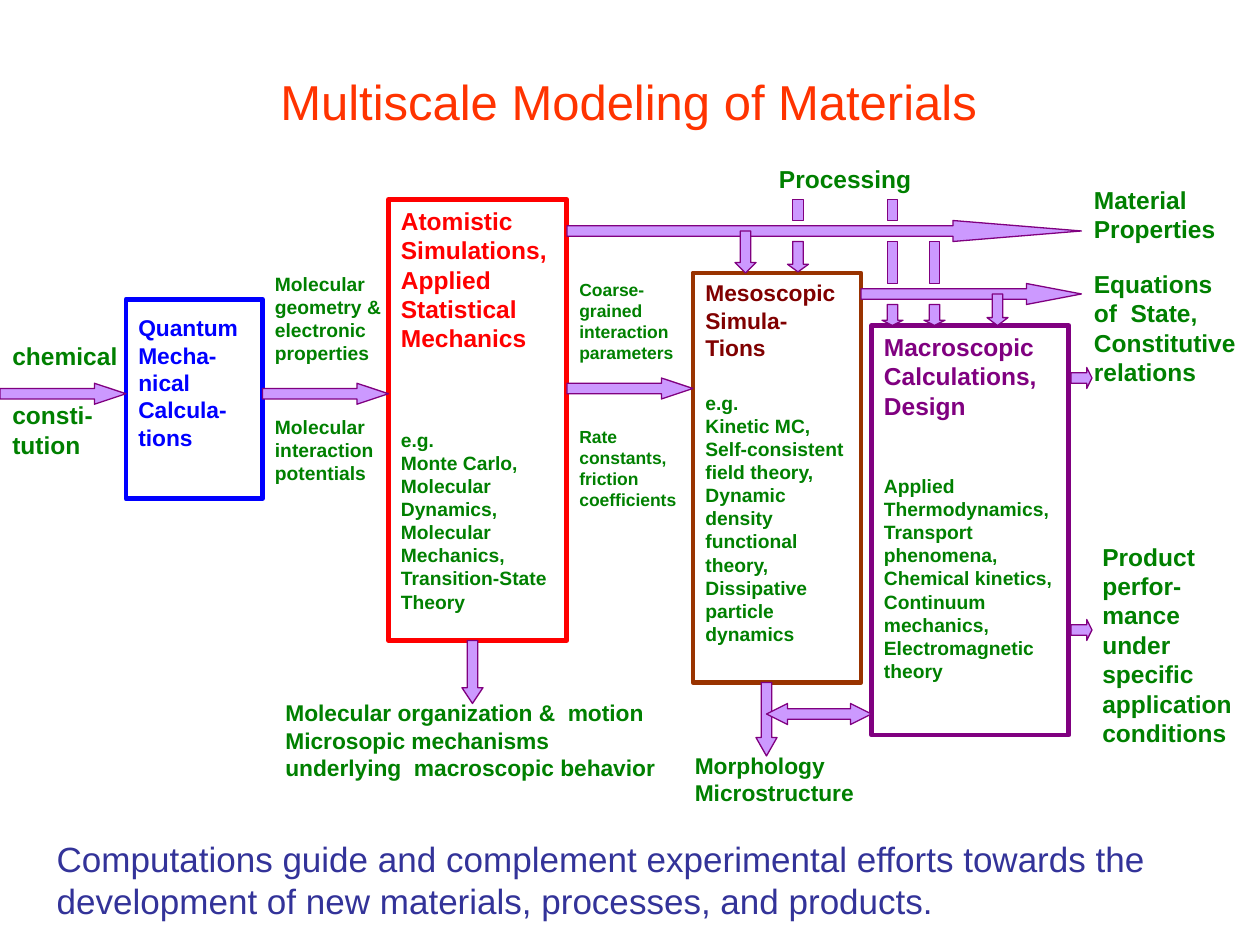
import pptx
import pptx.util
import pptx.dml.color
import pptx.enum.shapes
import pptx.enum.text
import pptx.oxml.xmlchemy
from dataclasses import dataclass

SHAPE = pptx.enum.shapes.MSO_SHAPE


@dataclass(frozen=True)
class Theme:
    font: str = "Arial"
    title: str = "FF3300"
    conclusion: str = "333399"
    label: str = "008000"
    quantum: str = "0000FF"
    atomistic: str = "FF0000"
    meso: str = "800000"
    meso_line: str = "993300"
    macro: str = "800080"
    panel: str = "FFFFFF"
    arrow: str = "CC99FF"
    arrow_line: str = "800080"
    title_size: int = 28
    conclusion_size: int = 20
    large: int = 14
    medium: int = 13
    small: int = 11
    tiny: int = 10
    panel_width: float = 2.75
    arrow_width: float = 0.75


class Diagram:
    COLUMNS, ROWS = 120, 90

    def __init__(self, prs, theme):
        self.theme = theme
        self.cell_w = prs.slide_width / self.COLUMNS
        self.cell_h = prs.slide_height / self.ROWS
        self.s = prs.slides.add_slide(prs.slide_layouts[1])

    def box(self, x, y, w, h):
        return (round(x * self.cell_w), round(y * self.cell_h),
                round(w * self.cell_w), round(h * self.cell_h))

    def rgb(self, color):
        return pptx.dml.color.RGBColor.from_string(color)

    def set_text(self, sp, blocks, top=0):
        tf = sp.text_frame
        tf.word_wrap = True
        tf.auto_size = pptx.enum.text.MSO_AUTO_SIZE.NONE
        tf.vertical_anchor = pptx.enum.text.MSO_ANCHOR.TOP
        tf.margin_left = tf.margin_right = pptx.util.Inches(0.1)
        tf.margin_top = pptx.util.Inches(0.05) + pptx.util.Pt(top)
        tf.margin_bottom = pptx.util.Inches(0.05)
        tf.text = "\n".join(text for text, *_ in blocks)
        paragraphs = iter(tf.paragraphs)
        for text, size, color, bold, gap in blocks:
            for i, _ in enumerate(text.split("\n")):
                p = next(paragraphs)
                p.alignment = pptx.enum.text.PP_ALIGN.LEFT
                p.space_before = pptx.util.Pt(0 if i else gap)
                for r in p.runs:
                    r.font.name = self.theme.font
                    r.font.size = pptx.util.Pt(size)
                    r.font.bold = bold
                    r.font.color.rgb = self.rgb(color)

    def placeholder(self, index, place, text, size, color):
        sp = self.s.placeholders[index]
        sp.left, sp.top, sp.width, sp.height = self.box(*place)
        self.set_text(sp, [(text, size, color, False, 0)])
        for p in sp.text_frame.paragraphs:
            pPr = p._p.get_or_add_pPr()
            pPr.set("marL", "0")
            pPr.set("indent", "0")
            pPr.append(pptx.oxml.xmlchemy.OxmlElement("a:buNone"))

    def label(self, place, size, *texts, gap=0, top=0):
        sp = self.s.shapes.add_textbox(*self.box(*place))
        self.set_text(sp, [(text, size, self.theme.label, True, gap if i else 0)
                           for i, text in enumerate(texts)], top)

    def shape(self, kind, place, fill, line, width):
        sp = self.s.shapes.add_shape(kind, *self.box(*place))
        sp.shadow.inherit = False
        sp.fill.solid()
        sp.fill.fore_color.rgb = self.rgb(fill)
        sp.line.color.rgb = self.rgb(line)
        sp.line.width = pptx.util.Pt(width)
        return sp

    def panel(self, place, line, color, size, heading, details="", gap=0, top=0):
        t = self.theme
        sp = self.shape(SHAPE.RECTANGLE, place, t.panel, line, t.panel_width)
        blocks = [(heading, size, color, True, 0)]
        if details:
            blocks.append((details, t.small, t.label, True, gap))
        self.set_text(sp, blocks, top)

    def bar(self, *place, kind=SHAPE.RECTANGLE):
        t = self.theme
        return self.shape(kind, place, t.arrow, t.arrow_line, t.arrow_width)

    def arrow(self, kind, x, y, length, head=0.25):
        thick = 2
        size = (thick, length) if kind == SHAPE.DOWN_ARROW else (length, thick)
        sp = self.bar(x, y, *size, kind=kind)
        sp.adjustments[0] = 0.5
        sp.adjustments[1] = head * length / thick


def main():
    prs = pptx.Presentation()
    prs.slide_width = pptx.util.Inches(10)
    prs.slide_height = pptx.util.Inches(7.5)
    t = Theme()
    d = Diagram(prs, t)

    d.placeholder(0, (25.5, 6.25, 78, 6.8), "Multiscale Modeling of Materials",
                  t.title_size, t.title)
    d.placeholder(1, (4.2, 79.2, 110.8, 9.2),
                  "Computations guide and complement experimental efforts towards "
                  "the development of new materials, processes, and products.",
                  t.conclusion_size, t.conclusion)

    d.panel((12, 28.5, 13, 19), t.quantum, t.quantum, t.medium,
            "Quantum\nMecha-\nnical\nCalcula-\ntions", top=4.8)
    d.panel((37, 19, 17, 42), t.atomistic, t.atomistic, t.large,
            "Atomistic\nSimulations,\nApplied Statistical\nMechanics",
            "e.g.\nMonte Carlo,\nMolecular Dynamics,\nMolecular Mechanics,\n"
            "Transition-State Theory", gap=43)
    d.panel((66, 26, 16, 39), t.meso_line, t.meso, t.medium,
            "Mesoscopic\nSimula-\nTions",
            "e.g.\nKinetic MC,\nSelf-consistent field theory,\nDynamic\n"
            "density functional\ntheory,\nDissipative particle\ndynamics", gap=17)
    d.panel((83, 31, 18.8, 39), t.macro, t.macro, t.large,
            "Macroscopic\nCalculations,\nDesign",
            "Applied\nThermodynamics, Transport phenomena,\nChemical kinetics,\n"
            "Continuum mechanics,\nElectromagnetic\ntheory", gap=31)

    d.label((0, 31.5, 13, 14), t.large, "chemical", "consti-\ntution", gap=17, top=2.4)
    d.label((25, 24.5, 14, 26), t.small, "Molecular\ngeometry &\nelectronic\nproperties",
            "Molecular\ninteraction potentials", gap=29, top=4.8)
    d.label((54, 24, 13, 36), t.tiny, "Coarse-grained\ninteraction\nparameters",
            "Rate constants,\nfriction coefficients", gap=36, top=12)
    d.label((73, 15, 21, 4), t.large, "Processing")
    d.label((103, 17, 17, 24), t.large, "Material\nProperties",
            "Equations\nof  State,\nConstitutive\nrelations", gap=14.4)
    d.label((103.8, 51, 16.2, 25), t.large,
            "Product perfor-mance\nunder  specific application conditions")
    d.label((26, 66, 38, 10), t.medium, "Molecular organization &  motion\n"
            "Microsopic mechanisms underlying  macroscopic behavior")
    d.label((65, 71, 18, 8), t.medium, "Morphology\nMicrostructure")

    for x, y, length in ((0, 36.5, 12), (25, 36.5, 12), (54, 36, 12), (54, 21, 49),
                         (82, 27, 21), (102, 35, 2), (102, 59, 2)):
        d.arrow(SHAPE.RIGHT_ARROW, x, y, length)
    for x, y, length in ((44, 61, 6), (72, 65, 7), (70, 22, 4), (75, 23, 2.9),
                         (84, 29, 2), (88, 29, 2), (94, 28, 3)):
        d.arrow(SHAPE.DOWN_ARROW, x, y, length)
    d.arrow(SHAPE.LEFT_RIGHT_ARROW, 73, 67, 10, head=0.2)
    for x, y, h in ((75.5, 19, 2), (84.5, 19, 2), (84.5, 23, 4), (88.5, 23, 4)):
        d.bar(x, y, 1, h)

    prs.save("out.pptx")


if __name__ == "__main__":
    main()
